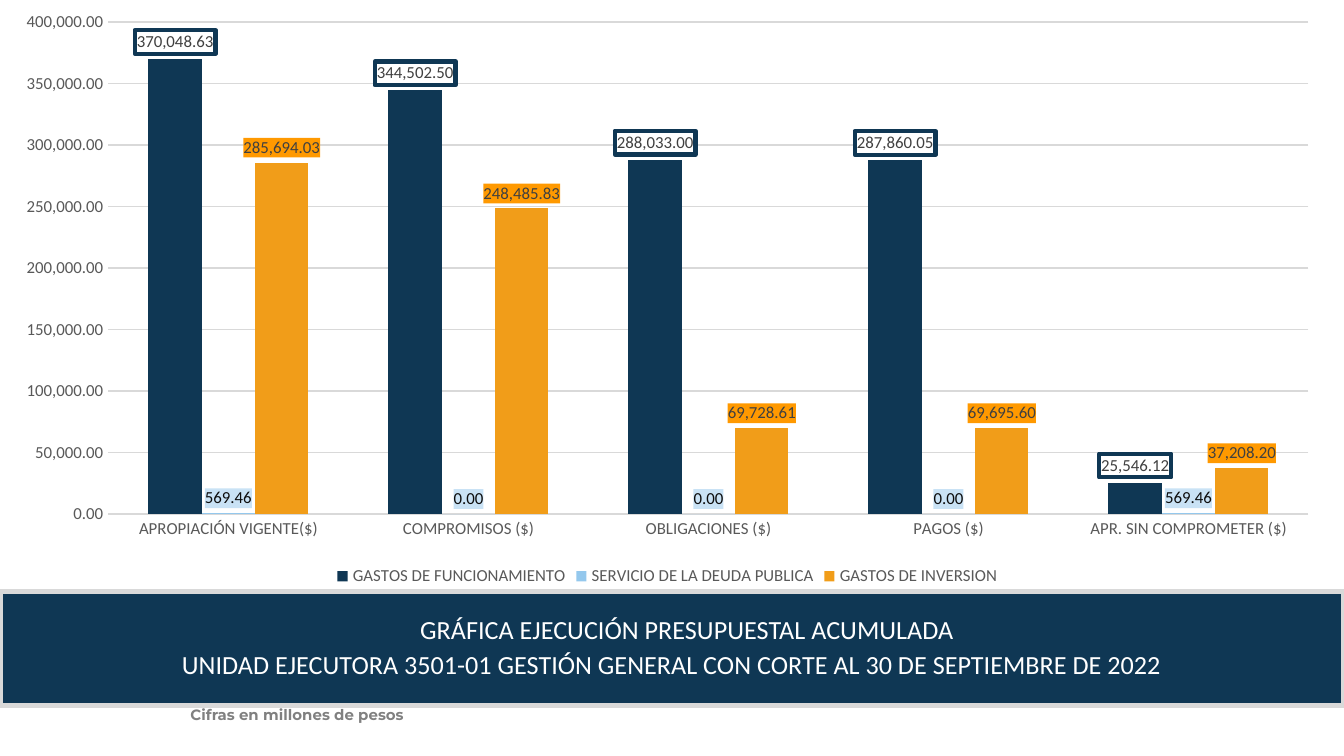
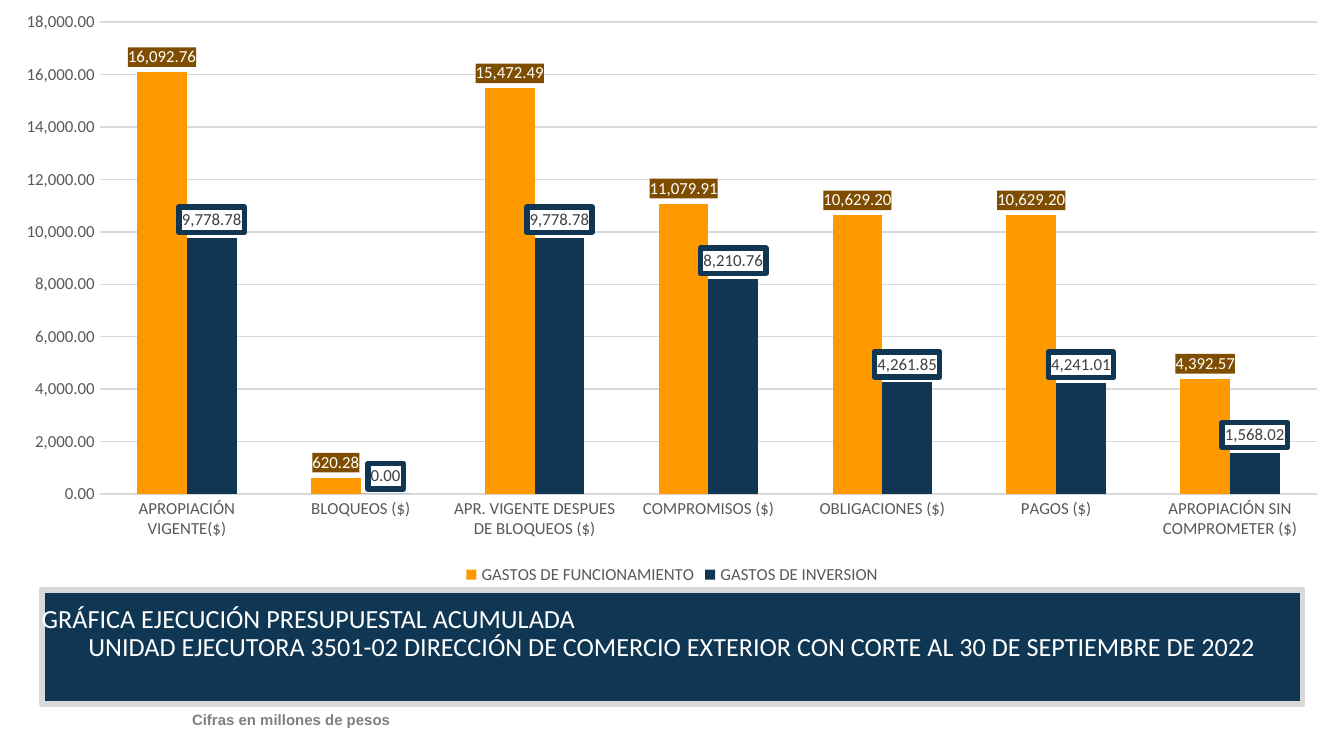
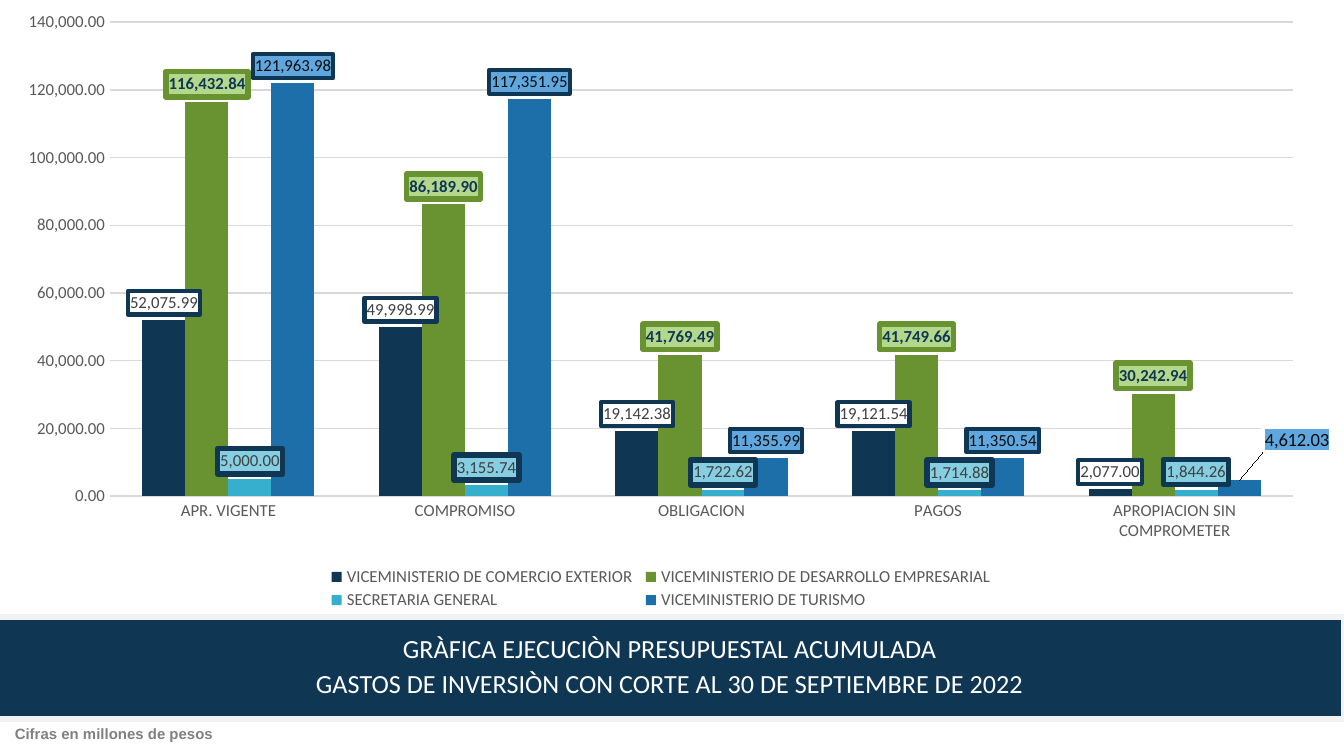
"""Three budget execution slides, each a column chart over a title band."""
from copy import deepcopy

from lxml.etree import SubElement
from pptx import Presentation
from pptx.chart.data import CategoryChartData
from pptx.dml.color import RGBColor
from pptx.enum.chart import XL_CHART_TYPE, XL_LABEL_POSITION, XL_LEGEND_POSITION, XL_TICK_MARK
from pptx.enum.shapes import MSO_SHAPE
from pptx.enum.text import MSO_ANCHOR, PP_ALIGN
from pptx.oxml import parse_xml
from pptx.oxml.ns import nsdecls, qn
from pptx.util import Cm, Pt

C = {
    "navy": "0F3754", "white": "FFFFFF", "grid": "D9D9D9", "pale": "F2F2F2",
    "axis": "595959", "note": "808080", "label": "404040", "ink": "0D0D0D",
    "sky": "94C8ED", "ice": "C9E2F5", "amber": "F19D19", "orange": "FF9900",
    "brown": "7F4D00", "green": "699331", "lime": "B4D88B", "teal": "36AFCE",
    "aqua": "86CEE1", "blue": "1D6FA9", "azure": "60A6DF",
}
FONT = "Calibri"
NUMBER = "#,##0.00"
NAVY_BOX = ("white", "navy", 2.25, "label", False)
THICK_BOX = ("white", "navy", 3, "label", False)
ORANGE_BOX = ("orange", None, 0, "label", False)
ICE_BOX = ("ice", None, 0, "ink", False)
BROWN_BOX = ("brown", None, 0, "white", False)
LIME_BOX = ("lime", "green", 3, "navy", True)
AQUA_BOX = ("aqua", "navy", 3, "label", False)
AZURE_BOX = ("azure", "navy", 2.25, "ink", False)

SLIDES = [
    {
        "chart": (0, 0, 25.22, 11.18), "plot": (2.05, 0.42, 22.68, 9.3),
        "scale": (400000, 50000),
        "cats": ["APROPIACIÓN VIGENTE($)", "COMPROMISOS ($)", "OBLIGACIONES ($)",
                 "PAGOS ($)", "APR. SIN COMPROMETER ($)"],
        "series": [
            ("GASTOS DE FUNCIONAMIENTO",
             [370048.63, 344502.5, 288033, 287860.05, 25546.12], "navy", NAVY_BOX),
            ("SERVICIO DE LA DEUDA PUBLICA", [569.46, 0, 0, 0, 569.46], "sky", ICE_BOX),
            ("GASTOS DE INVERSION",
             [285694.03, 248485.83, 69728.61, 69695.6, 37208.2], "amber", ORANGE_BOX),
        ],
        "band": (0, 11.18, 25.4, 2.16),
        "title": [("GRÁFICA EJECUCIÓN PRESUPUESTAL ACUMULADA", PP_ALIGN.CENTER, 0.57),
                  ("UNIDAD EJECUTORA 3501-01 GESTIÓN GENERAL CON CORTE AL 30 DE SEPTIEMBRE DE 2022",
                   PP_ALIGN.CENTER, 0)],
        "note": (3.35, 13.26, 4.57, 0.56), "note_font": "Montserrat",
    },
    {
        "chart": (0, 0, 25.4, 11.15), "plot": (1.89, 0.42, 23, 8.92),
        "scale": (18000, 2000),
        "cats": ["APROPIACIÓN VIGENTE($)", "BLOQUEOS ($)",
                 "APR. VIGENTE DESPUES DE BLOQUEOS ($)", "COMPROMISOS ($)",
                 "OBLIGACIONES ($)", "PAGOS ($)", "APROPIACIÓN SIN COMPROMETER ($)"],
        "series": [
            ("GASTOS DE FUNCIONAMIENTO",
             [16092.76, 620.28, 15472.49, 11079.91, 10629.2, 10629.2, 4392.57],
             "orange", BROWN_BOX),
            ("GASTOS DE INVERSION",
             [9778.78, 0, 9778.78, 8210.76, 4261.85, 4241.01, 1568.02], "navy", THICK_BOX),
        ],
        "band": (0.79, 11.15, 23.83, 2.16), "space": 0, "bottom": 0.5,
        "title": [("GRÁFICA EJECUCIÓN PRESUPUESTAL ACUMULADA", PP_ALIGN.LEFT, 0),
                  ("UNIDAD EJECUTORA 3501-02 DIRECCIÓN DE COMERCIO EXTERIOR CON CORTE AL 30 DE SEPTIEMBRE DE 2022",
                   PP_ALIGN.CENTER, 0)],
        "note": (3.38, 13.34, 5.08, 0.56),
    },
    {
        "chart": (0.03, 0, 25.17, 11.66), "plot": (2.06, 0.42, 22.43, 8.96),
        "legend": (6.1, 10.65, 12.8, 0.95), "scale": (140000, 20000),
        "cats": ["APR. VIGENTE", "COMPROMISO", "OBLIGACION", "PAGOS",
                 "APROPIACION SIN COMPROMETER"],
        "series": [
            ("VICEMINISTERIO DE COMERCIO EXTERIOR",
             [52075.99, 49998.99, 19142.38, 19121.54, 2077], "navy", NAVY_BOX),
            ("VICEMINISTERIO DE DESARROLLO EMPRESARIAL",
             [116432.84, 86189.9, 41769.49, 41749.66, 30242.94], "green", LIME_BOX),
            ("SECRETARIA GENERAL", [5000, 3155.74, 1722.62, 1714.88, 1844.26], "teal", AQUA_BOX),
            ("VICEMINISTERIO DE TURISMO",
             [121963.98, 117351.95, 11355.99, 11350.54, 4612.03], "blue", AZURE_BOX),
        ],
        "moved": (3, 4, 1.1, -0.43),
        "band": (-0.08, 11.66, 25.48, 1.93), "band_line": "pale",
        "title": [("GRÀFICA EJECUCIÒN PRESUPUESTAL ACUMULADA", PP_ALIGN.CENTER, 0),
                  ("GASTOS DE INVERSIÒN CON CORTE AL 30 DE SEPTIEMBRE DE 2022",
                   PP_ALIGN.CENTER, 0)],
        "note": (0.03, 13.61, 5.08, 0.56),
    },
]


def rgb(name):
    """Return the palette colour of that name."""
    return RGBColor.from_string(C[name])


def set_font(font, size, color, name=FONT, bold=False):
    """Set size, colour, typeface and weight of a font."""
    font.size, font.name, font.bold = Pt(size), name, bold
    font.color.rgb = rgb(color)


def manual_layout(box, size, inner=False):
    """Return a chart layout for lengths in cm within a chart of that size."""
    layout = parse_xml(f"<c:layout {nsdecls('c')}><c:manualLayout/></c:layout>")
    manual = layout[0]
    items = []
    if inner:
        items.append(("layoutTarget", "inner"))
    if len(box) == 4:
        items += [("xMode", "edge"), ("yMode", "edge")]
    items += [(key, f"{v / size[i % 2]:.4f}") for i, (key, v) in enumerate(zip("xywh", box))]
    for tag, val in items:
        SubElement(manual, qn(f"c:{tag}")).set("val", val)
    return layout


def add_labels(series, fill, line, width, color, bold):
    """Put boxed value labels above the columns of a series."""
    labels = series.data_labels
    labels.show_value = True
    labels.number_format, labels.number_format_is_linked = NUMBER, False
    labels.position = XL_LABEL_POSITION.OUTSIDE_END
    set_font(labels.font, 9, color, bold=bold)
    stroke = f'<a:solidFill><a:srgbClr val="{C[line]}"/></a:solidFill>' if line else "<a:noFill/>"
    box = parse_xml(
        f'<c:spPr {nsdecls("c", "a")}><a:solidFill><a:srgbClr val="{C[fill]}"/></a:solidFill>'
        f'<a:ln w="{Pt(width)}">{stroke}</a:ln></c:spPr>')
    labels._element.find(qn("c:txPr")).addprevious(box)


def move_label(series, point, offset, size):
    """Shift one label of a series by an offset in cm, keeping its style."""
    series.points[point].data_label.position = XL_LABEL_POSITION.OUTSIDE_END
    labels = series.data_labels._element
    label = labels.find(qn("c:dLbl"))
    parts = [manual_layout(offset, size)]
    parts += [deepcopy(labels.find(qn(f"c:{tag}"))) for tag in ("numFmt", "spPr", "txPr")]
    for part in reversed(parts):
        label.find(qn("c:idx")).addnext(part)


def style_axes(chart, top, step):
    """Style both axes and the gridlines."""
    for axis in (chart.category_axis, chart.value_axis):
        axis.major_tick_mark = axis.minor_tick_mark = XL_TICK_MARK.NONE
        axis.format.line.fill.background()
        set_font(axis.tick_labels.font, 9, "axis")
    axis = chart.value_axis
    axis.minimum_scale, axis.maximum_scale, axis.major_unit = 0, top, step
    axis.tick_labels.number_format = NUMBER
    axis.tick_labels.number_format_is_linked = False
    line = axis.major_gridlines.format.line
    line.width = Pt(0.75)
    line.color.rgb = rgb("grid")


def add_budget_chart(slide, box, info):
    """Draw the clustered columns with their legend in the box."""
    data = CategoryChartData(number_format=NUMBER)
    data.categories = info["cats"]
    for name, values, *_ in info["series"]:
        data.add_series(name, values)
    chart = slide.shapes.add_chart(
        XL_CHART_TYPE.COLUMN_CLUSTERED, *map(Cm, box), data).chart
    size = box[2:]
    set_font(chart.font, 10, "ink")
    chart.has_title = False
    style_axes(chart, *info["scale"])
    plot = chart.plots[0]
    plot.gap_width, plot.overlap, plot.vary_by_categories = 150, 0, False
    for series, (_, _, color, style) in zip(plot.series, info["series"]):
        series.format.fill.solid()
        series.format.fill.fore_color.rgb = rgb(color)
        add_labels(series, *style)
    if "moved" in info:
        index, point, *offset = info["moved"]
        move_label(plot.series[index], point, offset, size)
    area = chart._chartSpace.chart.plotArea
    for old in area.findall(qn("c:layout")):
        area.remove(old)
    area.insert(0, manual_layout(info["plot"], size, inner=True))
    chart.has_legend = True
    legend = chart.legend
    legend.position, legend.include_in_layout = XL_LEGEND_POSITION.BOTTOM, False
    set_font(legend.font, 9, "axis")
    if "legend" in info:
        for old in legend._element.findall(qn("c:layout")):
            legend._element.remove(old)
        legend._element.find(qn("c:legendPos")).addnext(manual_layout(info["legend"], size))


def add_band(slide, box, info):
    """Draw the title band in the box."""
    sp = slide.shapes.add_shape(MSO_SHAPE.RECTANGLE, *map(Cm, box))
    sp.shadow.inherit = False
    sp.fill.solid()
    sp.fill.fore_color.rgb = rgb("navy")
    sp.line.color.rgb = rgb(info.get("band_line", "grid"))
    sp.line.width = Pt(3)
    tf = sp.text_frame
    tf.word_wrap, tf.vertical_anchor = True, MSO_ANCHOR.MIDDLE
    tf.margin_left = tf.margin_right = tf.margin_top = 0
    tf.margin_bottom = Cm(info.get("bottom", 0))
    for i, (text, align, indent) in enumerate(info["title"]):
        p = tf.add_paragraph() if i else tf.paragraphs[0]
        p.alignment, p.line_spacing = align, 0.9
        p.space_before = Pt(info.get("space", 3.6))
        if indent:
            p._p.get_or_add_pPr().set("marL", str(Cm(indent)))
        r = p.add_run()
        r.text = text
        set_font(r.font, 14, "white")


def add_note(slide, box, font):
    """Write the unit note in the box."""
    tf = slide.shapes.add_textbox(*map(Cm, box)).text_frame
    tf.word_wrap = True
    p = tf.paragraphs[0]
    p.line_spacing = 0.9
    r = p.add_run()
    r.text = "Cifras en millones de pesos"
    set_font(r.font, 8, "note", font, True)


def main():
    """Build the slides and save them."""
    prs = Presentation()
    prs.slide_width, prs.slide_height = Cm(25.4), Cm(14.29)
    for info in SLIDES:
        slide = prs.slides.add_slide(prs.slide_layouts[6])
        add_band(slide, info["band"], info)
        add_note(slide, info["note"], info.get("note_font", "Arial"))
        add_budget_chart(slide, info["chart"], info)
    prs.save("out.pptx")


if __name__ == "__main__":
    main()
